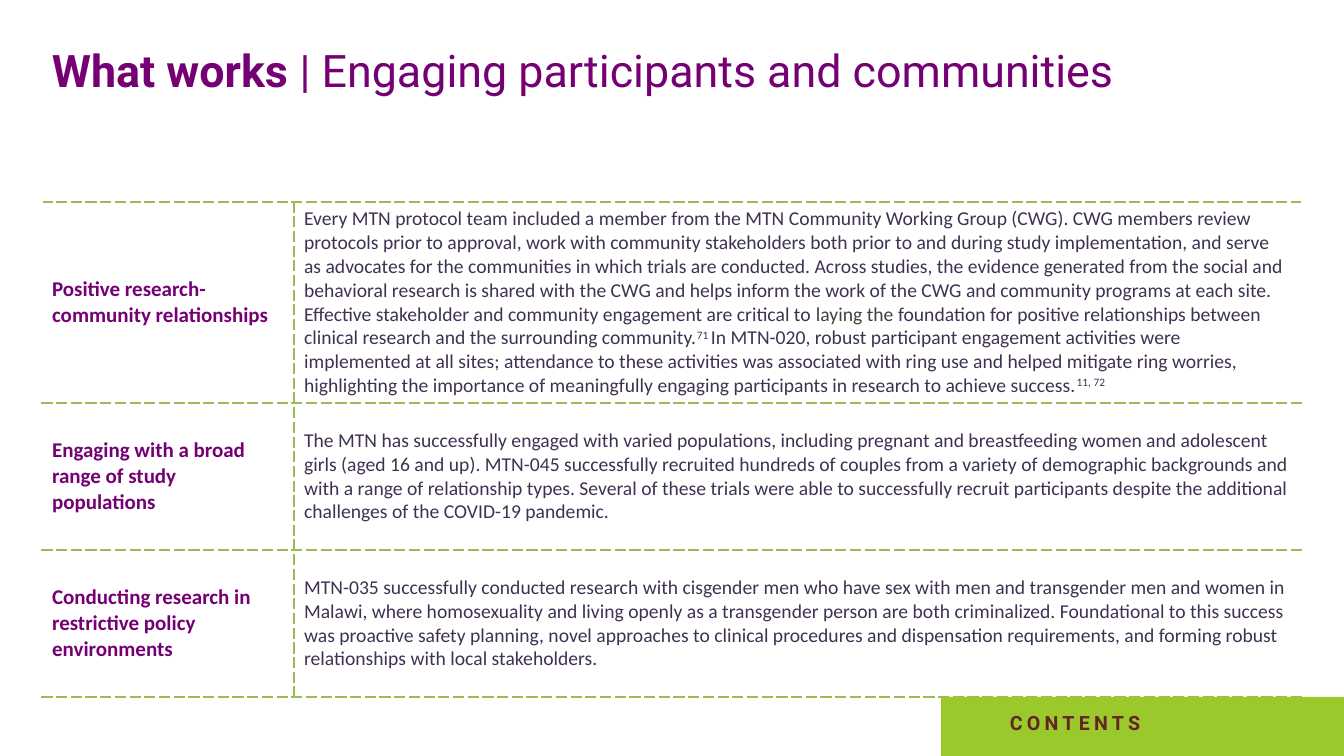
from lxml.etree import SubElement
from pptx import Presentation
from pptx.dml.color import RGBColor
from pptx.enum.shapes import MSO_SHAPE
from pptx.enum.text import MSO_ANCHOR
from pptx.oxml.ns import qn
from pptx.util import Emu, Pt

PURPLE = RGBColor(0x74, 0x00, 0x74)
INDIGO = RGBColor(0x40, 0x31, 0x52)
GREY = RGBColor(0x40, 0x40, 0x40)
GREEN = RGBColor(0x9B, 0xBB, 0x59)
LIME = RGBColor(0x9B, 0xC8, 0x2A)
MAROON = RGBColor(0x63, 0x25, 0x23)
WHITE = RGBColor(0xFF, 0xFF, 0xFF)

TITLE = {"name": "Roboto", "size": Pt(32), "bold": False, "rgb": PURPLE}
TITLE_LEAD = TITLE | {"bold": True}
TOPIC = {"name": "Calibri", "size": Pt(15), "bold": True, "rgb": PURPLE}
FINDING = {"name": "Calibri", "size": Pt(14), "bold": False, "rgb": INDIGO}
FINDING_GREY = FINDING | {"rgb": GREY}
CITATION = FINDING | {"baseline": 30000}
BUTTON = {"name": "Roboto", "size": Pt(14), "bold": True, "rgb": MAROON, "spc": 300}

COLUMN_WIDTHS = [252, 1008]
ROW_HEIGHTS = [201, 147, 147]
FINDINGS = [
    ("Positive research-community relationships", [
        ("Every MTN protocol team included a member from the MTN Community Working Group (CWG). "
         "CWG members review protocols prior to approval, work with community stakeholders both "
         "prior to and during study implementation, and serve as advocates for the communities in "
         "which trials are conducted. Across studies, the evidence generated from the social and "
         "behavioral research is shared with the CWG and helps inform the work of the CWG and "
         "community programs at each site. Effective stakeholder and community engagement are "
         "critical to ", FINDING),
        ("laying the ", FINDING_GREY),
        ("foundation for positive relationships between clinical research and the surrounding "
         "community.", FINDING),
        ("71 ", CITATION),
        ("In MTN-020, robust participant engagement activities were implemented at all sites; "
         "attendance to these activities was associated with ring use and helped mitigate ring "
         "worries, highlighting the importance of meaningfully engaging participants in research "
         "to achieve success.", FINDING),
        ("11, 72", CITATION),
    ]),
    ("Engaging with a broad range of study populations", [
        ("The MTN has successfully engaged with varied populations, including pregnant and "
         "breastfeeding women and adolescent girls (aged 16 and up). MTN-045 successfully "
         "recruited hundreds of couples from a variety of demographic backgrounds and with a range "
         "of relationship types. Several of these trials were able to successfully recruit "
         "participants despite the additional challenges of the COVID-19 pandemic.", FINDING),
    ]),
    ("Conducting research in restrictive policy environments", [
        ("MTN-035 successfully conducted research with cisgender men who have sex with men and "
         "transgender men and women in Malawi, where homosexuality and living openly as a "
         "transgender person are both criminalized. Foundational to this success was proactive "
         "safety planning, novel approaches to clinical procedures and dispensation requirements, "
         "and forming robust relationships with local stakeholders.", FINDING),
    ]),
]


def px(length):
    """Turn whole pixels into EMU."""
    return Emu(round(length * 914400 / 100.8))


def write_runs(paragraph, runs):
    """Add each (text, format) pair to the paragraph."""
    for text, style in runs:
        run = paragraph.add_run()
        run.text = text
        for key, value in style.items():
            if key == "rgb":
                run.font.color.rgb = value
            elif key in ("baseline", "spc"):
                run.font._element.set(key, str(value))
            else:
                setattr(run.font, key, value)


def add_text(slide, left, top, width, height, runs, anchor):
    """Place one line of formatted text in the given box."""
    frame = slide.shapes.add_textbox(px(left), px(top), px(width), px(height)).text_frame
    frame.word_wrap = True
    frame.vertical_anchor = anchor
    write_runs(frame.paragraphs[0], runs)


def add_border(cell, side, color, dash):
    """Draw one edge of a table cell."""
    edge = SubElement(cell._tc.get_or_add_tcPr(), qn(f"a:ln{side}"), w=str(Pt(1)))
    paint = SubElement(edge, qn("a:solidFill"))
    SubElement(paint, qn("a:srgbClr"), val=str(color))
    SubElement(edge, qn("a:prstDash"), val=dash)


def add_findings(slide, left, top):
    """Build the table of topics and findings from its top left corner."""
    table = slide.shapes.add_table(
        len(ROW_HEIGHTS), len(COLUMN_WIDTHS), px(left), px(top),
        px(sum(COLUMN_WIDTHS)), px(sum(ROW_HEIGHTS))).table
    table.first_row = table.horz_banding = False
    for column, width in zip(table.columns, COLUMN_WIDTHS):
        column.width = px(width)
    for row, height, (topic, finding) in zip(table.rows, ROW_HEIGHTS, FINDINGS):
        row.height = px(height)
        contents = [[(topic, TOPIC)], finding]
        for cell, runs, outer_side in zip(row.cells, contents, "LR"):
            for side in "LRTB":
                is_outer = side == outer_side
                add_border(cell, side, WHITE if is_outer else GREEN,
                           "solid" if is_outer else "sysDash")
            cell.fill.background()
            cell.vertical_anchor = MSO_ANCHOR.MIDDLE
            write_runs(cell.text_frame.paragraphs[0], runs)


def add_contents_button(slide, left, top, width, height):
    """Place the green contents tab and its label."""
    tab = slide.shapes.add_shape(
        MSO_SHAPE.RECTANGLE, px(left), px(top), px(width), px(height))
    tab.shadow.inherit = False
    tab.fill.solid()
    tab.fill.fore_color.rgb = LIME
    tab.line.fill.background()
    add_text(slide, left + 59, top + 9, 277, 34, [("CONTENTS", BUTTON)], MSO_ANCHOR.TOP)


def main():
    """Build and save the slide."""
    deck = Presentation()
    deck.slide_width, deck.slide_height = px(1344), px(756)
    slide = deck.slides.add_slide(deck.slide_layouts[6])
    add_text(slide, 42, 16, 1328, 107,
             [("What works ", TITLE_LEAD), ("| Engaging participants and communities", TITLE)],
             MSO_ANCHOR.MIDDLE)
    add_findings(slide, 42, 202)
    add_contents_button(slide, 941, 697, 403, 338)
    deck.save("out.pptx")


if __name__ == "__main__":
    main()
